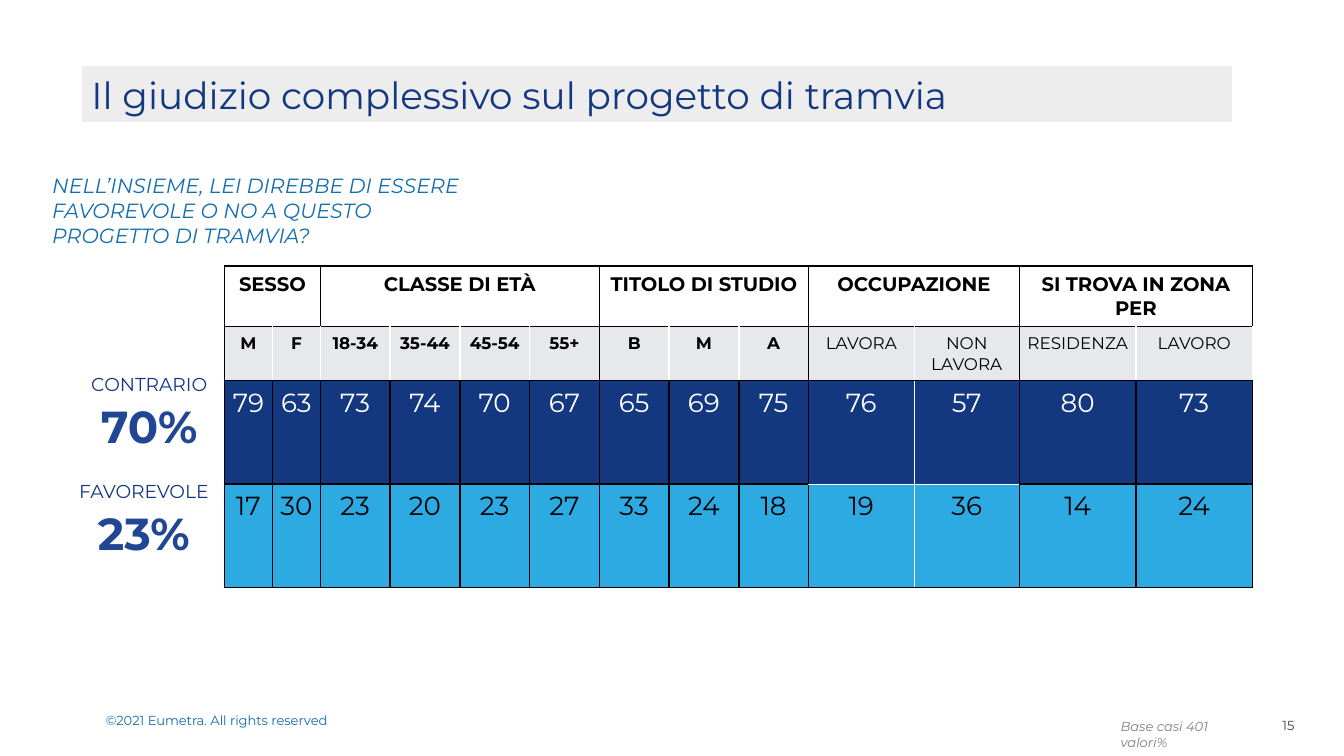
import pptx
import pptx.dml.color
import pptx.enum.text
import pptx.oxml
import pptx.oxml.ns
import pptx.util

RGB = pptx.dml.color.RGBColor
ALIGN = pptx.enum.text.PP_ALIGN
ANCHOR = pptx.enum.text.MSO_ANCHOR

WHITE = RGB(0xFF, 0xFF, 0xFF)
BLACK = RGB(0, 0, 0)
INK = RGB(0x01, 0x02, 0x05)
NAVY = RGB(0x14, 0x38, 0x80)
ROYAL = RGB(0x20, 0x46, 0x94)
BLUE = RGB(0x14, 0x6D, 0xAF)
SKY = RGB(0x2D, 0xAA, 0xE1)
PALE = RGB(0xE7, 0xE8, 0xEC)
BAND = RGB(0xED, 0xED, 0xED)
GREY = RGB(0x80, 0x80, 0x80)
DARK = RGB(0x40, 0x40, 0x40)

FONT = "Montserrat"
WIDTH = pptx.util.Inches(10)
HEIGHT = pptx.util.Inches(5.625)

GROUPS = [
    ("SESSO", 3.57, ["M", "F"]),
    ("CLASSE DI ETÀ", 5.19, ["18-34", "35-44", "45-54", "55+"]),
    ("TITOLO DI STUDIO", 5.19, ["B", "M", "A"]),
    ("OCCUPAZIONE", 7.85, ["LAVORA", "NON LAVORA"]),
    ("SI TROVA IN ZONA PER", 8.67, ["RESIDENZA", "LAVORO"]),
]
AGAINST = [79, 63, 73, 74, 70, 67, 65, 69, 75, 76, 57, 80, 73]
FAVOUR = [17, 30, 23, 20, 23, 27, 33, 24, 18, 19, 36, 14, 24]
ROWS = [6.4, 5.51, 13.69, 13.69]
SOLID = (BLACK, 0.96)
LIGHT = (WHITE, 0.96)
THIN = (WHITE, 0.5)


def across(share):
    return int(WIDTH * share / 100)


def down(share):
    return int(HEIGHT * share / 100)


def area(left, top, width, height):
    return across(left), down(top), across(width), down(height)


def style(par, size, color, bold=False, italic=False, align=ALIGN.LEFT):
    par.alignment = align
    par.font.name = FONT
    par.font.size = pptx.util.Pt(size)
    par.font.bold = bold
    par.font.italic = italic
    par.font.color.rgb = color


def add_text(slide, place, text, size, color, wrap=True, **look):
    frame = slide.shapes.add_textbox(*area(*place)).text_frame
    frame.word_wrap = wrap
    frame.text = text
    style(frame.paragraphs[0], size, color, **look)
    return frame


def add_title(slide, text):
    title = slide.shapes.title
    title.left, title.top, title.width, title.height = area(5.8, 8.18, 86.2, 8.53)
    title.fill.solid()
    title.fill.fore_color.rgb = BAND
    title.line.color.rgb = WHITE
    title.line.width = pptx.util.Pt(4.5)
    title.text_frame.text = text
    title.text_frame.vertical_anchor = ANCHOR.MIDDLE
    style(title.text_frame.paragraphs[0], 20, NAVY)


def add_score(slide, left, top, name, score):
    frame = add_text(slide, (left, top, 21.4, 12.27), name, 10, NAVY, align=ALIGN.CENTER)
    par = frame.add_paragraph()
    par.text = score
    style(par, 24, ROYAL, bold=True, align=ALIGN.CENTER)
    for par in frame.paragraphs:
        par.line_spacing = 1.07


def side_pen(row, col):
    if row > 0 and col == 10:
        return THIN
    return LIGHT if row == 1 and col not in (0, 6, 9, 11) else SOLID


def level_pen(row, col):
    return THIN if row == 3 and col in (9, 10) else SOLID


def add_edge(cell, side, pen):
    color, width = pen
    cell._tc.get_or_add_tcPr().append(pptx.oxml.parse_xml(
        f'<a:ln{side} {pptx.oxml.ns.nsdecls("a")} w="{pptx.util.Pt(width)}">'
        f'<a:solidFill><a:srgbClr val="{color}"/></a:solidFill></a:ln{side}>'))


def fill_cell(grid, row, col, text, fill, size, color, bold=False):
    cell = grid.cell(row, col)
    cell.margin_left = cell.margin_right = pptx.util.Inches(0.01)
    add_edge(cell, "L", side_pen(row, col))
    add_edge(cell, "R", side_pen(row, col + 1))
    add_edge(cell, "T", level_pen(row, col))
    add_edge(cell, "B", level_pen(row + 1, col))
    if fill is None:
        cell.fill.background()
    else:
        cell.fill.solid()
        cell.fill.fore_color.rgb = fill
    cell.text = text
    style(cell.text_frame.paragraphs[0], size, color, bold, align=ALIGN.CENTER)


def add_grid(slide):
    wide = [width for _, width, names in GROUPS for _ in names]
    place = area(16.7, 35.2, sum(wide), sum(ROWS))
    grid = slide.shapes.add_table(len(ROWS), len(wide), *place).table
    grid.first_row = grid.horz_banding = False
    for row, share in zip(grid.rows, ROWS):
        row.height = down(share)
    col = 0
    for group, width, names in GROUPS:
        start = col
        for name in names:
            grid.columns[col].width = across(width)
            head = group if col == start else ""
            fill_cell(grid, 0, col, head, None, 10.5, BLACK, True)
            fill_cell(grid, 1, col, name, PALE, 9, BLACK, col < 9)
            fill_cell(grid, 2, col, str(AGAINST[col]), NAVY, 14, WHITE)
            fill_cell(grid, 3, col, str(FAVOUR[col]), SKY, 14, INK)
            col += 1
        grid.cell(0, start).merge(grid.cell(0, col - 1))


def add_foot(slide):
    frame = add_text(slide, (6.9, 92.8, 45.1, 6.76),
                     "©2021 Eumetra. All rights reserved", 7, BLUE)
    frame.margin_top = frame.margin_bottom = pptx.util.Inches(0.1)
    frame.paragraphs[0].line_spacing = 1.15
    add_text(slide, (87.9, 94.04, 9.4, 3.91), "15", 7, DARK, align=ALIGN.RIGHT)
    add_text(slide, (82.4, 94.22, 10.7, 3.91), "Base casi 401 valori%", 7, GREY,
             wrap=False, italic=True)


def main():
    deck = pptx.Presentation()
    deck.slide_width, deck.slide_height = WIDTH, HEIGHT
    slide = deck.slides.add_slide(deck.slide_layouts[5])
    add_title(slide, "Il giudizio complessivo sul progetto di tramvia")
    add_foot(slide)
    add_grid(slide)
    add_score(slide, 0.4, 48.18, "CONTRARIO", "70%")
    add_score(slide, 0, 62.4, "FAVOREVOLE", "23%")
    add_text(slide, (2.9, 22.04, 34.7, 5.33),
             "NELL’INSIEME, LEI DIREBBE DI ESSERE FAVOREVOLE O NO A QUESTO "
             "PROGETTO DI TRAMVIA?", 11, BLUE, italic=True)
    deck.save("out.pptx")


if __name__ == "__main__":
    main()
